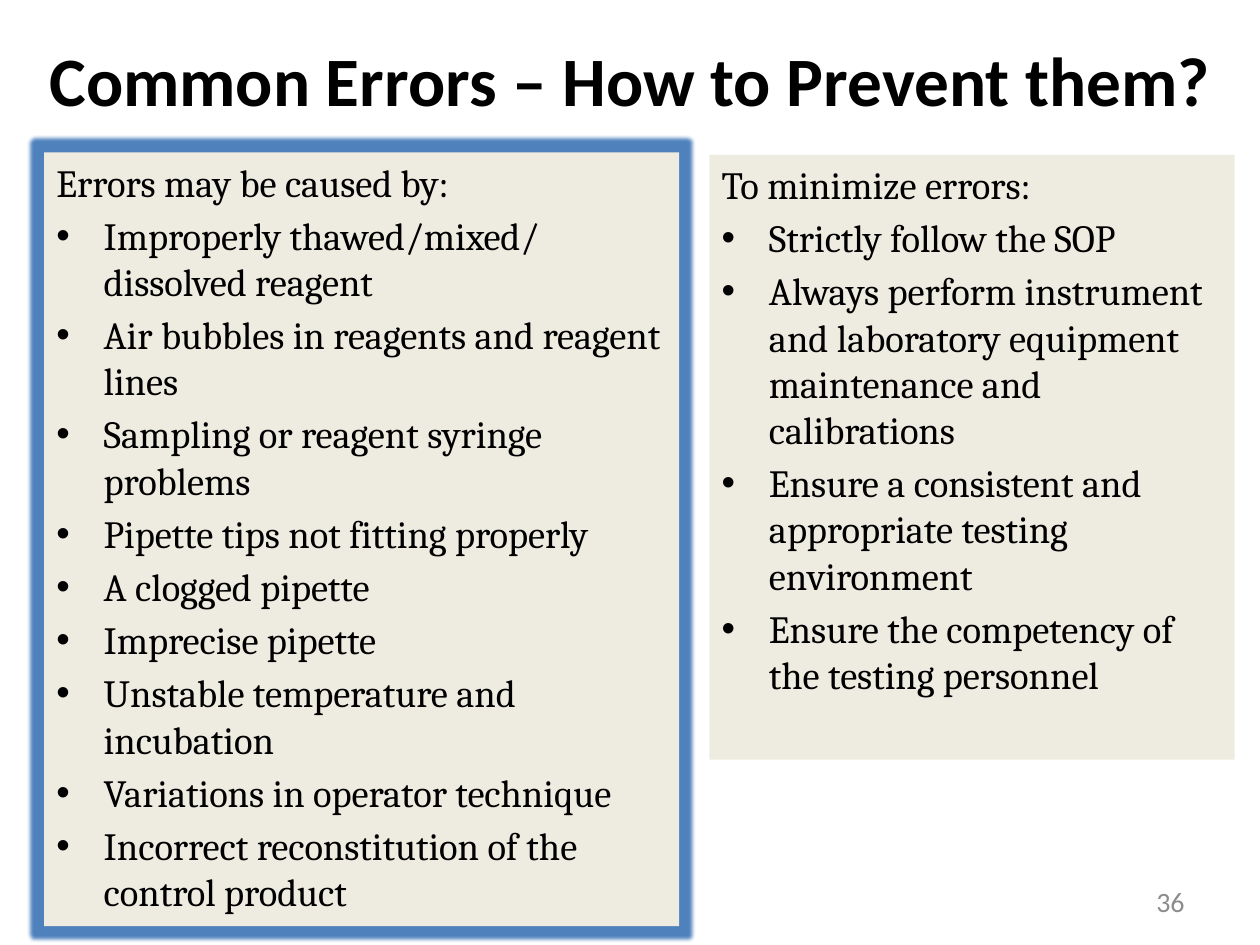
from lxml import etree
from pptx import Presentation
from pptx.dml.color import RGBColor
from pptx.enum.text import MSO_ANCHOR, PP_ALIGN
from pptx.oxml.ns import qn
from pptx.util import Pt

LEFT, CENTER, RIGHT = PP_ALIGN.LEFT, PP_ALIGN.CENTER, PP_ALIGN.RIGHT
TOP, MIDDLE = MSO_ANCHOR.TOP, MSO_ANCHOR.MIDDLE
INDENT = Pt(27)


def color(code):
    return RGBColor.from_string(code)


def write(box, lines, size=22, font="Cambria", ink="000000", bold=False,
          align=LEFT, anchor=TOP, gap=0):
    frame = box.text_frame
    frame.word_wrap = True
    frame.vertical_anchor = anchor
    for i, line in enumerate(lines):
        para = frame.paragraphs[0] if i == 0 else frame.add_paragraph()
        para.alignment = align
        para.space_before = Pt(gap)
        run = para.add_run()
        run.text = line
        run.font.size = Pt(size)
        run.font.name = font
        run.font.bold = bold
        run.font.color.rgb = color(ink)
        if i > 0:
            props = para._p.get_or_add_pPr()
            props.set("marL", str(INDENT))
            props.set("indent", str(-INDENT))
            etree.SubElement(props, qn("a:buFont"), typeface="Arial")
            etree.SubElement(props, qn("a:buChar"), char="•")


deck = Presentation()
deck.slide_width, deck.slide_height = Pt(720), Pt(540)
slide = deck.slides.add_slide(deck.slide_layouts[6])
shapes = slide.shapes

title = shapes.add_textbox(Pt(0), Pt(0), Pt(720), Pt(90))
write(title, ["Common Errors – How to Prevent them?"], size=39.6,
      font="Calibri", bold=True, align=CENTER, anchor=MIDDLE)

causes = [
    "Errors may be caused by:",
    "Improperly thawed/mixed/ dissolved reagent",
    "Air bubbles in reagents and reagent lines",
    "Sampling or reagent syringe problems",
    "Pipette tips not fitting properly",
    "A clogged pipette",
    "Imprecise pipette",
    "Unstable temperature and incubation",
    "Variations in operator technique",
    "Incorrect reconstitution of the control product",
]
cures = [
    "To minimize errors:",
    "Strictly follow the SOP",
    "Always perform instrument and laboratory equipment maintenance and calibrations",
    "Ensure a consistent and appropriate testing environment",
    "Ensure the competency of the testing personnel",
]
panels = [
    (25.2, 87.12, 362.88, 442.08, causes, True),
    (405.36, 88.56, 300.24, 345.6, cures, False),
]
for left, top, width, height, lines, lit in panels:
    panel = shapes.add_textbox(Pt(left), Pt(top), Pt(width), Pt(height))
    panel.fill.solid()
    panel.fill.fore_color.rgb = color("EEECE1")
    panel.line.fill.background()
    panel.shadow.inherit = False
    write(panel, lines, gap=4)
    if lit:
        effects = panel._element.spPr.find(qn("a:effectLst"))
        glow = etree.SubElement(effects, qn("a:glow"), rad=str(Pt(5)))
        etree.SubElement(glow, qn("a:srgbClr"), val="4F81BD")

number = shapes.add_textbox(Pt(516), Pt(500.5), Pt(168), Pt(28.75))
write(number, ["36"], size=16, font="Calibri", ink="8C8C8C",
      align=RIGHT, anchor=MIDDLE)

deck.save("out.pptx")
